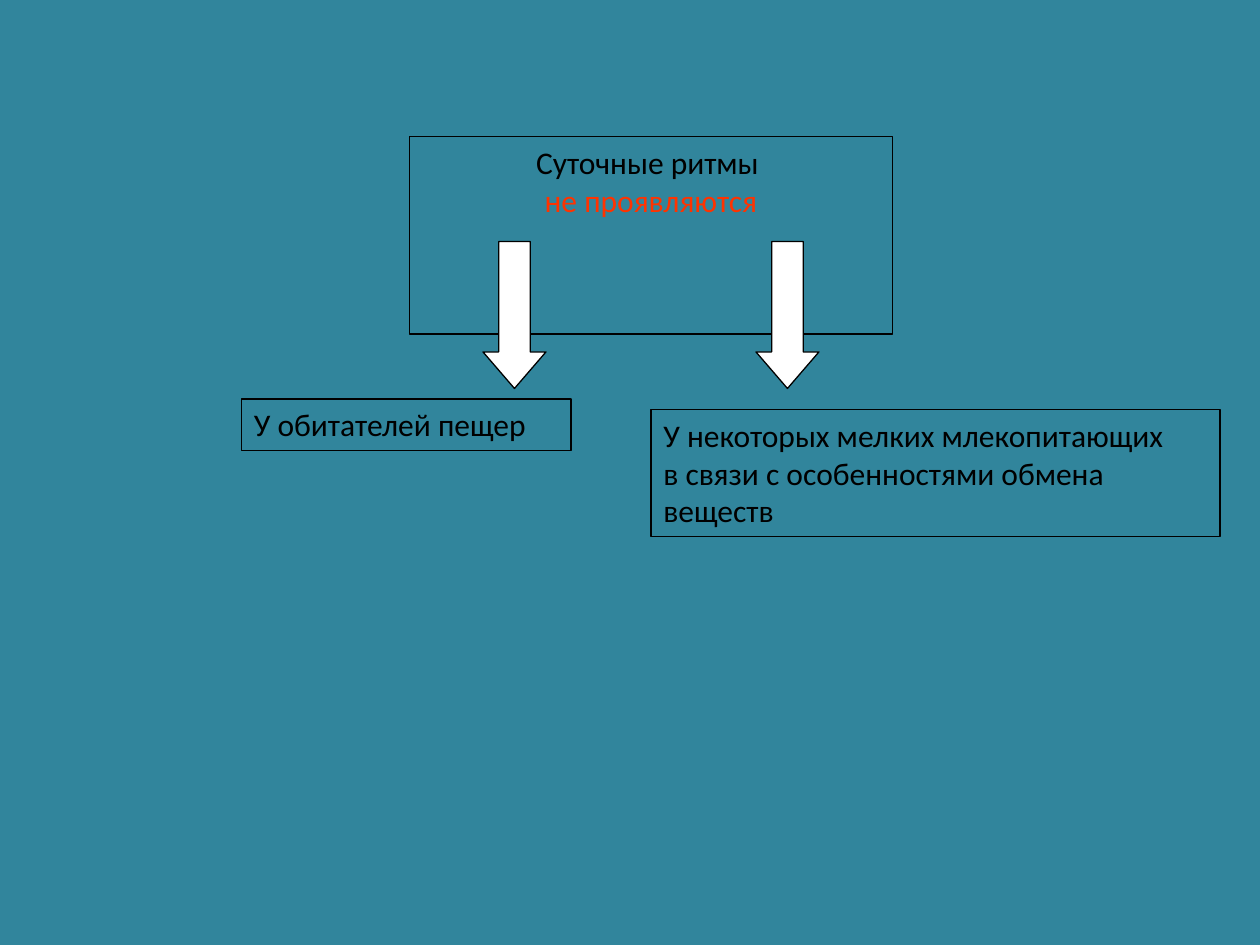
from pptx import Presentation
from pptx.dml.color import RGBColor
from pptx.enum.shapes import MSO_SHAPE
from pptx.enum.text import MSO_ANCHOR, MSO_AUTO_SIZE, PP_ALIGN
from pptx.util import Inches, Pt

DOWN_ARROW = MSO_SHAPE.DOWN_ARROW
TOP = MSO_ANCHOR.TOP
FIT_SHAPE = MSO_AUTO_SIZE.SHAPE_TO_FIT_TEXT
LEFT, CENTER = PP_ALIGN.LEFT, PP_ALIGN.CENTER

CELLS_PER_INCH = 12
TEAL, BLACK, WHITE, RED = "31859C", "000000", "FFFFFF", "FF3300"


def color(hex_value):
    return RGBColor.from_string(hex_value)


def grid(*cells):
    return [Inches(cell / CELLS_PER_INCH) for cell in cells]


def outline(shape):
    shape.line.color.rgb = color(BLACK)
    shape.line.width = Pt(0.75)


def write_box(box, lines, align=LEFT, wrap=True):
    outline(box)
    frame = box.text_frame
    frame.text = "\n".join(text for text, _ in lines)
    frame.word_wrap = wrap
    frame.auto_size = FIT_SHAPE
    frame.vertical_anchor = TOP
    for paragraph, (_, ink) in zip(frame.paragraphs, lines):
        paragraph.alignment = align
        paragraph.font.name = "Calibri"
        paragraph.font.size = Pt(18)
        paragraph.font.color.rgb = color(ink)


def add_heading(slide, cells, lines):
    heading = slide.shapes.title
    heading.left, heading.top, heading.width, heading.height = grid(*cells)
    write_box(heading, lines, CENTER)


def add_case(slide, cells, lines):
    case = slide.shapes.add_textbox(*grid(*cells))
    write_box(case, [(text, BLACK) for text in lines], wrap=False)


def add_arrow(slide, column, row):
    arrow = slide.shapes.add_shape(DOWN_ARROW, *grid(column, row, 6, 14))
    arrow.adjustments[1] = 0.58
    arrow.shadow.inherit = False
    arrow.fill.solid()
    arrow.fill.fore_color.rgb = color(WHITE)
    outline(arrow)


def main():
    deck = Presentation()
    deck.slide_width, deck.slide_height = grid(120, 90)
    slide = deck.slides.add_slide(deck.slide_layouts.get_by_name("Title Only"))
    slide.background.fill.solid()
    slide.background.fill.fore_color.rgb = color(TEAL)

    add_heading(slide, (39, 13, 46, 8.5),
                [("Суточные ритмы ", BLACK), ("не проявляются", RED)])
    add_case(slide, (23, 38, 31.4, 4.9), ["У обитателей пещер"])
    add_case(slide, (62, 39, 54.2, 12.1),
             ["У некоторых мелких млекопитающих",
              "в связи с особенностями обмена",
              "веществ"])
    for column in (46, 72):
        add_arrow(slide, column, 23)

    deck.save("out.pptx")


if __name__ == "__main__":
    main()
